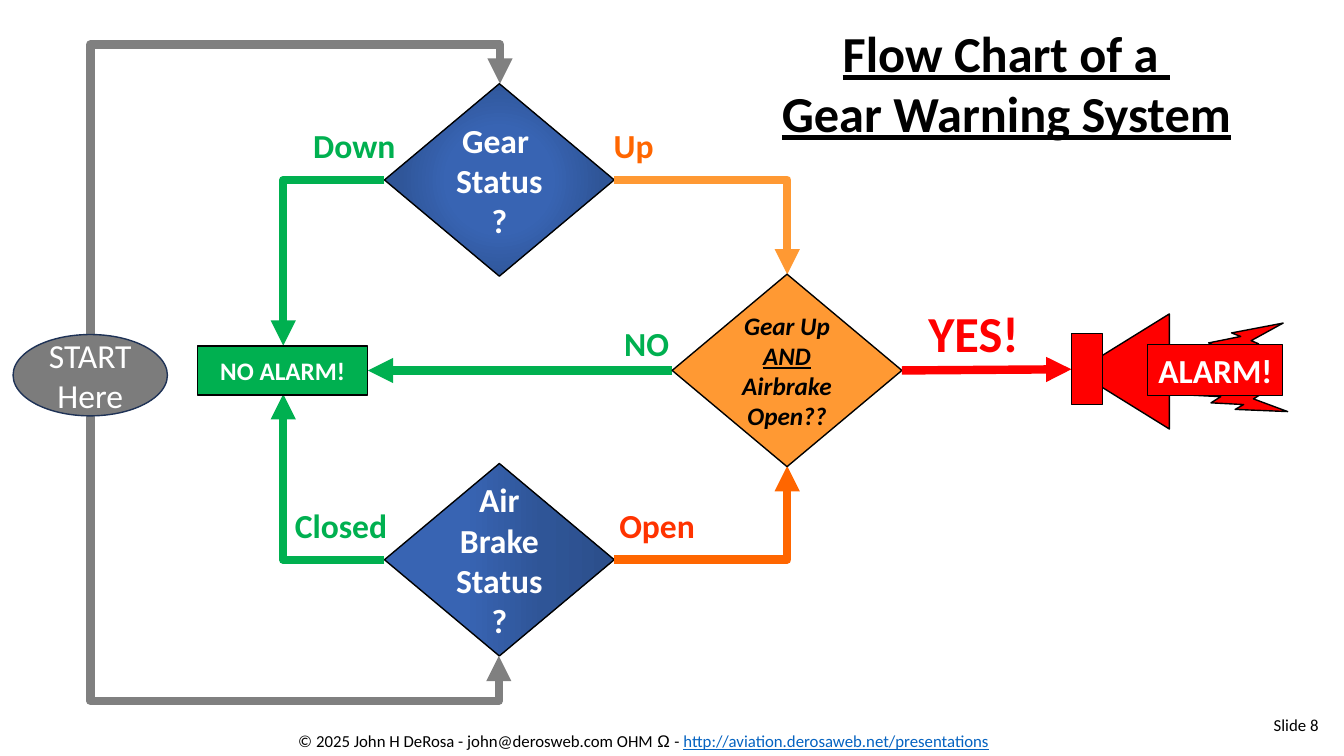
from collections import namedtuple
from pptx import Presentation
from pptx.dml.color import RGBColor
from pptx.enum.shapes import MSO_CONNECTOR as LINK, MSO_SHAPE as FORM
from pptx.enum.text import MSO_ANCHOR as ANCHOR, PP_ALIGN as ALIGN
from pptx.oxml import parse_xml
from pptx.oxml.ns import nsdecls, qn
from pptx.util import Cm, Pt

Box = namedtuple("Box", "x y w h")
GREEN, RED, AMBER, ORANGE = "00B050", "FF0000", "FF9933", "FF6600"
GREY, BLACK, WHITE = "808080", "000000", "FFFFFF"
WIDE, HIGH = 5.79, 4.85


def tint(code):
    return RGBColor.from_string(code)


def write(item, lines, size=24, color=WHITE, bold=True, italic=False,
          under=False, align=ALIGN.CENTER, anchor=ANCHOR.MIDDLE, wrap=True):
    frame = item.text_frame
    frame.word_wrap = wrap
    frame.vertical_anchor = anchor
    for index, line in enumerate(lines):
        para = frame.add_paragraph() if index else frame.paragraphs[0]
        para.alignment = align
        parts = [(line, {})] if isinstance(line, str) else line
        for words, change in parts:
            run = para.add_run()
            run.text = words
            font = run.font
            font.size = Pt(size)
            font.bold = bold
            font.italic = italic
            font.name = change.get("face", "Calibri")
            font.underline = change.get("under", under)
            font.color.rgb = tint(change.get("color", color))


def label(slide, box, lines, **style):
    item = slide.shapes.add_textbox(*map(Cm, box))
    write(item, lines, anchor=ANCHOR.TOP, **style)


def shape(slide, form, box, fill, edge=BLACK, weight=1, turn=0):
    item = slide.shapes.add_shape(form, *map(Cm, box))
    item.shadow.inherit = False
    item.fill.solid()
    item.fill.fore_color.rgb = tint(fill)
    item.line.color.rgb = tint(edge)
    item.line.width = Pt(weight)
    item.rotation = turn
    return item


def shade(item, path):
    stops = ((0, "3864B3"), (35, "3864B3"), (69, "2F5597"), (97, "2C4F8C"))
    body = "".join(f'<a:gs pos="{pos * 1000}"><a:srgbClr val="{code}"/></a:gs>'
                   for pos, code in stops)
    item.fill.gradient()
    old = item._element.spPr.find(qn("a:gradFill"))
    new = parse_xml(f'<a:gradFill {nsdecls("a")} rotWithShape="1">'
                    f'<a:gsLst>{body}</a:gsLst>{path}</a:gradFill>')
    old.getparent().replace(old, new)


def arrow(slide, start, end, color, kind=LINK.STRAIGHT):
    line = slide.shapes.add_connector(kind, *map(Cm, start + end))
    line.line.color.rgb = tint(color)
    line.line.width = Pt(6)
    props = line._element.spPr
    props.find(qn("a:ln")).append(
        parse_xml(f'<a:tailEnd {nsdecls("a")} type="triangle"/>'))
    props.append(parse_xml(f'<a:effectLst {nsdecls("a")}/>'))
    return props


def corner(slide, start, end, color):
    props = arrow(slide, start, end, color, LINK.ELBOW)
    props.find(qn("a:prstGeom")).set("prst", "bentConnector2")


def loop(slide, start, end, color, reach):
    (x, y), (right, low) = start, end
    mid, level = (x + right) / 2, (y + low) / 2
    half, rise = abs(low - y) / 2, (right - x) / 2
    side = 1 if low < y else -1
    props = arrow(slide, (mid + half, level + side * rise),
                  (mid - half, level - side * rise), color, LINK.ELBOW)
    props.find(qn("a:xfrm")).set("rot", str((180 - side * 90) * 60000))
    guides = props.find(qn("a:prstGeom")).get_or_add_avLst()
    guides.append(parse_xml(f'<a:gd {nsdecls("a")} name="adj1" '
                            f'fmla="val {round(reach * 100000)}"/>'))


def begin(slide, box):
    oval = Box(box.x, box.y + 6.32, 3.89, 2.05)
    mid = oval.x + oval.w / 2
    loop(slide, (mid, oval.y), (box.x + box.w, box.y), GREY, 1.156)
    loop(slide, (mid, oval.y + oval.h),
         (box.x + box.w - 0.03, box.y + box.h), GREY, 1.187)
    item = shape(slide, FORM.OVAL, oval, "7C7C7C", "1E3256")
    write(item, ["START", "Here"], bold=False)


def check(slide, box, lines, path, left, right, rise):
    x, y = box.x + 2.55, box.y if rise > 0 else box.y + box.h - HIGH
    mid = y + HIGH / 2
    goal = box.y + box.h if rise > 0 else box.y
    item = shape(slide, FORM.DIAMOND, (x, y, WIDE, HIGH), WHITE)
    shade(item, path)
    write(item, lines)
    corner(slide, (x, mid), (box.x, goal), GREEN)
    corner(slide, (x + WIDE, mid), (box.x + box.w, mid + rise), right[3])
    for words, shift, wide, color in (left, right[:3] + (right[4],)):
        label(slide, (box.x + shift, y + 0.91, wide, 1.27), [words],
              color=color, wrap=False)


def verdict(slide, box):
    mid = box.y + box.h / 2
    calm = Box(box.x, mid - 0.62, 4.29, 1.24)
    ask = Box(box.x + 11.96, box.y, WIDE, HIGH)
    item = shape(slide, FORM.RECTANGLE, calm, GREEN)
    write(item, ["NO ALARM!"], size=18)
    arrow(slide, (ask.x, mid), (calm.x + calm.w, mid), GREEN)
    item = shape(slide, FORM.DIAMOND, ask, AMBER)
    write(item, [[("Gear Up ", {}), ("AND", {"under": True}),
                  (" Airbrake Open??", {})]],
          size=18, color=BLACK, italic=True)
    arrow(slide, (ask.x + ask.w, mid), (box.x + box.w, mid - 0.03), RED)
    label(slide, (box.x + 10.49, box.y + 1.09, 1.65, 1.27), ["NO"],
          color=GREEN, wrap=False)
    label(slide, (box.x + 17.63, box.y + 0.58, 4.14, 1.8), ["YES! "],
          size=36, color=RED)


def alarm(slide, box):
    x, y = box.x, box.y
    shape(slide, FORM.ISOSCELES_TRIANGLE, (x - 0.15, y + 0.27, 2.9, 2.34),
          RED, turn=270)
    shape(slide, FORM.RECTANGLE, (x, y + 0.49, 0.79, 1.78), RED)
    bolt = shape(slide, FORM.LIGHTNING_BOLT, (x + 2.92, y + 0.06, 2.34, 1.35),
                 RED, turn=7.6)
    bolt._element.spPr.find(qn("a:xfrm")).set("flipV", "1")
    shape(slide, FORM.LIGHTNING_BOLT, (x + 2.97, y + 1.45, 2.34, 1.35),
          RED, turn=344)
    item = shape(slide, FORM.RECTANGLE, (x + 1.93, y + 0.77, 3.4, 1.27),
                 RED, weight=0.75)
    write(item, ["ALARM!"], wrap=False)


def title(slide, box):
    label(slide, box, ["Flow Chart of a ", "Gear Warning System"],
          size=36, color=BLACK, under=True)


def footer(slide, box):
    line = [("© 2025 John H DeRosa - john@derosweb.com OHM ", {}),
            ("Ω ", {"face": "Arial"}), ("- ", {}),
            ("http://aviation.derosaweb.net/presentations",
             {"color": "0563C1", "under": True}), (" ", {})]
    label(slide, (box.x, box.y + 0.41, 20.24, 0.76), [line],
          size=12, color=BLACK, bold=False)
    label(slide, (box.x + box.w - 3.86, box.y, 3.86, 1.02), ["Slide 8"],
          size=12, color=BLACK, bold=False, align=ALIGN.RIGHT)


def main():
    deck = Presentation()
    deck.slide_width, deck.slide_height = Cm(33.87), Cm(19.05)
    slide = deck.slides.add_slide(deck.slide_layouts[6])
    title(slide, Box(14.53, 0.43, 21.67, 3.33))
    begin(slide, Box(0.33, 2.11, 12.27, 14.42))
    check(slide, Box(7.14, 2.11, 12.7, 6.6), ["Gear ", "Status?"],
          '<a:path path="circle"><a:fillToRect l="50000" t="50000" '
          'r="50000" b="50000"/></a:path>',
          ("Down", 0.48, 2.62, GREEN), ("Up", 8.07, 1.52, AMBER, ORANGE), 2.38)
    check(slide, Box(7.14, 9.93, 12.7, 6.6), ["Air Brake Status?"],
          '<a:lin ang="0" scaled="1"/>', ("Closed", 0.02, 2.87, GREEN),
          ("Open", 8.2, 2.44, ORANGE, "FF3300"), -2.36)
    verdict(slide, Box(4.98, 6.91, 22.02, HIGH))
    alarm(slide, Box(27, 7.92, 5.73, 2.9))
    footer(slide, Box(6.15, 17.88, 27.33, 1.17))
    deck.save("out.pptx")


if __name__ == "__main__":
    main()
